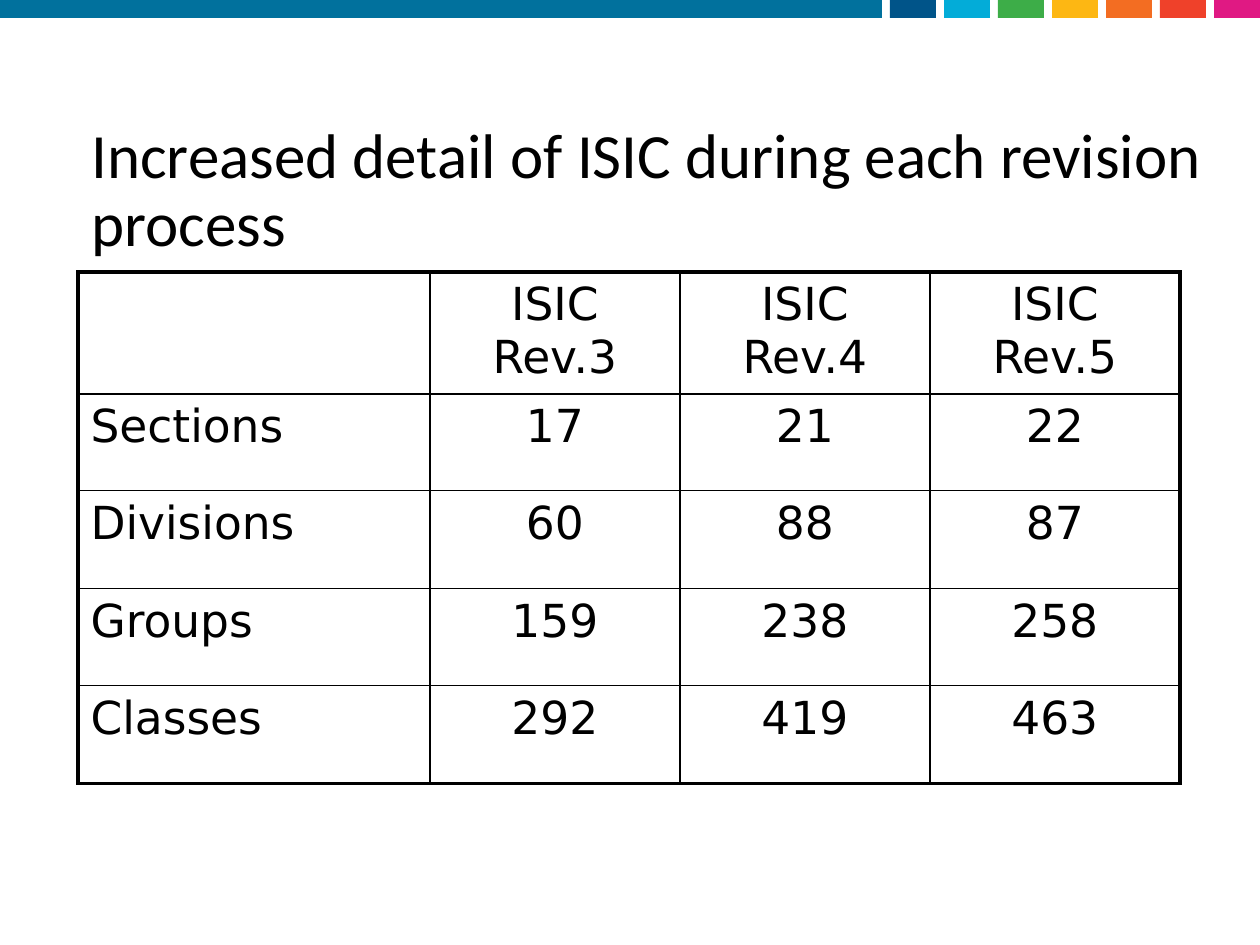
"""Build the slide on the growing detail of ISIC revisions."""
from lxml import etree
from pptx import Presentation
from pptx.dml.color import RGBColor
from pptx.enum.shapes import MSO_SHAPE
from pptx.enum.text import MSO_ANCHOR, PP_ALIGN
from pptx.oxml.ns import qn
from pptx.util import Emu, Pt

RECT = MSO_SHAPE.RECTANGLE
MIDDLE = MSO_ANCHOR.MIDDLE
LEFT, CENTER = PP_ALIGN.LEFT, PP_ALIGN.CENTER
COLORS = {
    "black": "000000", "teal": "01719D", "navy": "005489", "cyan": "03ACD8",
    "green": "3DAD48", "yellow": "FDB713", "orange": "F36D22",
    "red": "EF412A", "pink": "E01983",
}
ACCENTS = ["navy", "cyan", "green", "yellow", "orange", "red", "pink"]
ROWS = [
    ["", "ISIC Rev.3", "ISIC Rev.4", "ISIC Rev.5"],
    ["Sections", "17", "21", "22"],
    ["Divisions", "60", "88", "87"],
    ["Groups", "159", "238", "258"],
    ["Classes", "292", "419", "463"],
]
COL_WIDTHS = [352, 250, 250, 250]
ROW_HEIGHTS = [119, 97, 98, 97, 98]
THIN, THICK = 1, 2.25


def px(n):
    """Convert pixels at 126 to the inch into EMU."""
    return Emu(round(n * 914400 / 126))


def add_bar(s, x, w, color):
    """Add one block of the strip along the top edge."""
    bar = s.shapes.add_shape(RECT, px(x), 0, px(w), px(18))
    bar.shadow.inherit = False
    bar.fill.solid()
    bar.fill.fore_color.rgb = RGBColor.from_string(COLORS[color])
    bar.line.fill.background()


def add_run(p, text, font, size):
    """Add a black run to a paragraph."""
    r = p.add_run()
    r.text = text
    r.font.name = font
    r.font.size = Pt(size)
    r.font.color.rgb = RGBColor.from_string(COLORS["black"])


def add_title(s, text):
    """Add the slide title."""
    tf = s.shapes.add_textbox(px(79), px(129), px(1140), px(126)).text_frame
    tf.word_wrap = True
    tf.vertical_anchor = MIDDLE
    p = tf.paragraphs[0]
    p.line_spacing = 0.9
    add_run(p, text, "Calibri", 36)


def set_border(cell, side, width):
    """Draw one side of a cell in solid black."""
    tc_pr = cell._tc.get_or_add_tcPr()
    ln = etree.SubElement(tc_pr, qn(f"a:ln{side}"), w=str(Pt(width)))
    fill = etree.SubElement(ln, qn("a:solidFill"))
    etree.SubElement(fill, qn("a:srgbClr"), val=COLORS["black"])


def add_table(s, x, y):
    """Add the table of counts with a thick outer frame."""
    n_rows, n_cols = len(ROWS), len(COL_WIDTHS)
    table = s.shapes.add_table(n_rows, n_cols, px(x), px(y),
                               px(sum(COL_WIDTHS)), px(sum(ROW_HEIGHTS))).table
    table.first_row = table.horz_banding = False
    for column, width in zip(table.columns, COL_WIDTHS):
        column.width = px(width)
    for row, height in zip(table.rows, ROW_HEIGHTS):
        row.height = px(height)
    for i, values in enumerate(ROWS):
        for j, text in enumerate(values):
            cell = table.cell(i, j)
            outer = {"L": j == 0, "R": j == n_cols - 1,
                     "T": i == 0, "B": i == n_rows - 1}
            for side, is_outer in outer.items():
                set_border(cell, side, THICK if is_outer else THIN)
            cell.fill.background()
            p = cell.text_frame.paragraphs[0]
            p.alignment = CENTER if j else LEFT
            if text:
                add_run(p, text, "DejaVu Sans", 26)


def main():
    """Build and save the slide."""
    prs = Presentation()
    prs.slide_width, prs.slide_height = px(1260), px(945)
    s = prs.slides.add_slide(prs.slide_layouts[6])
    add_bar(s, 0, 882, "teal")
    for i, color in enumerate(ACCENTS):
        add_bar(s, 890 + 54 * i, 46, color)
    add_title(s, "Increased detail of ISIC during each revision process")
    add_table(s, 78, 272)
    prs.save("out.pptx")


if __name__ == "__main__":
    main()
